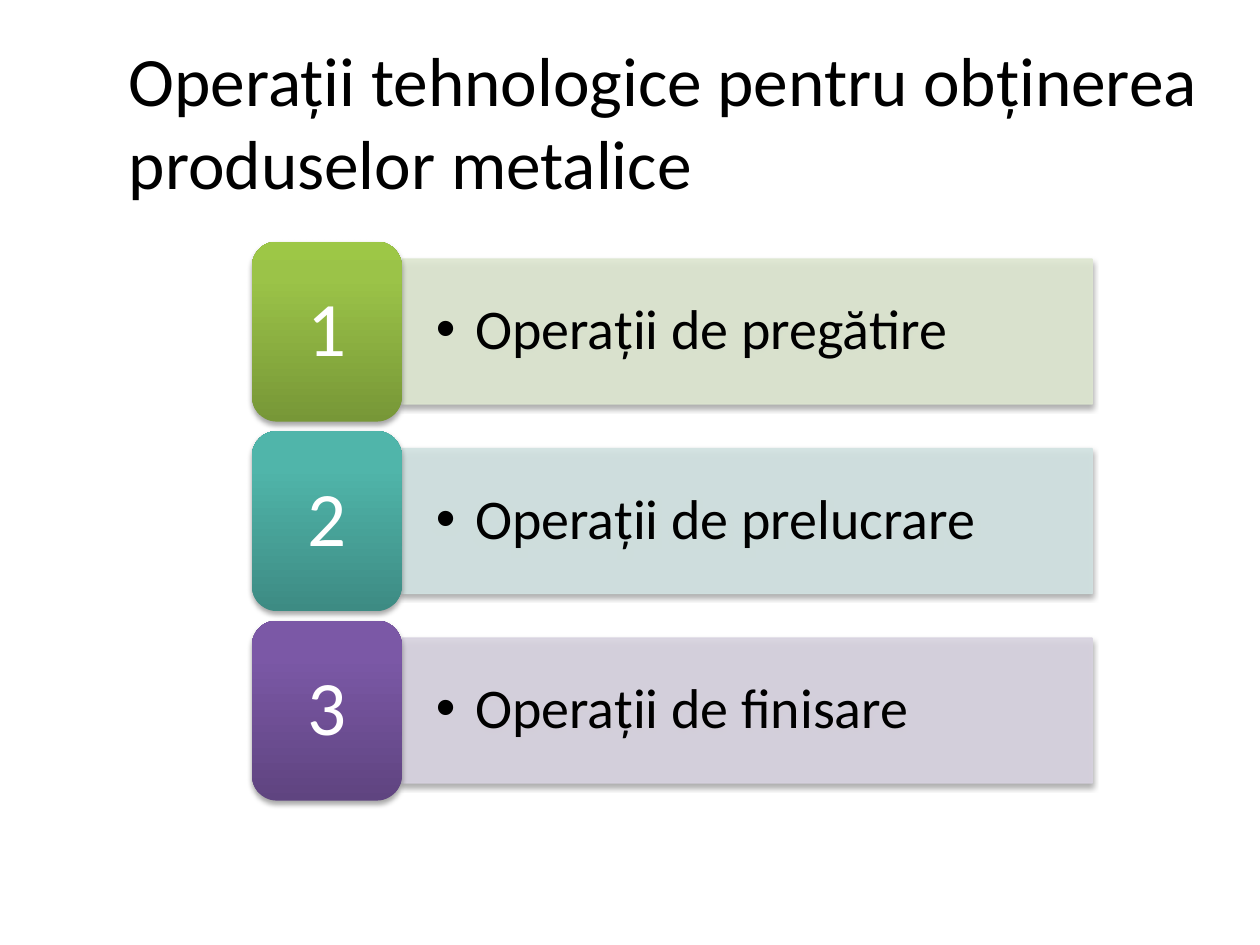
from dataclasses import dataclass

from lxml.etree import SubElement
from pptx import Presentation
from pptx.dml.color import RGBColor
from pptx.enum.shapes import MSO_SHAPE as Shape
from pptx.enum.text import MSO_ANCHOR as Anchor, MSO_AUTO_SIZE as AutoSize, PP_ALIGN as Align
from pptx.oxml.ns import qn
from pptx.util import Cm, Pt


@dataclass(frozen=True)
class Theme:
    font: str = "Calibri"
    dark: str = "000000"
    light: str = "FFFFFF"
    title_size: float = 39.6
    number_size: float = 44
    item_size: float = 32
    bar_opacity: int = 90
    shadow_opacity: int = 35


@dataclass(frozen=True)
class Step:
    text: str
    bar_color: str
    gradient: tuple[str, str, str]  # bottom to top


THEME = Theme()
STEPS = [
    Step("Operații de pregătire", "DEE7D1", ("779737", "9BC348", "9DC746")),
    Step("Operații de prelucrare", "D2E3E2", ("3D8B83", "50B5AA", "4EB8AC")),
    Step("Operații de finisare", "D8D3E0", ("5F4480", "7B58A6", "7C57A8")),
]
GRADIENT_STOPS = (0, 80, 100)

BADGE_LEFT, BADGE_W, BADGE_H = 5.08, 3.02, 3.63
BAR_W, BAR_H = 13.92, 2.92
FIRST_TOP, PITCH = 4.87, 3.82
INDENT = 0.79


def set_attrs(target, values: dict) -> None:
    for name, value in values.items():
        setattr(target, name, value)


def set_alpha(color, percent: int) -> None:
    SubElement(color, qn("a:alpha"), val=str(percent * 1000))


def add_shadow(sp) -> None:
    """Soft shadow straight below; call once fill and line are set."""
    sp.shadow.inherit = False
    effects = sp._element.spPr.find(qn("a:effectLst"))
    shadow = SubElement(effects, qn("a:outerShdw"), blurRad=str(Pt(3.1)),
                        dist=str(Pt(1.8)), dir="5400000", rotWithShape="0")
    set_alpha(SubElement(shadow, qn("a:srgbClr"), val=THEME.dark), THEME.shadow_opacity)


def write_text(sp, text: str, size: float, color: str, frame: dict, paragraph: dict) -> None:
    tf = sp.text_frame
    set_attrs(tf, {"word_wrap": True, "vertical_anchor": Anchor.MIDDLE} | frame)
    p = tf.paragraphs[0]
    set_attrs(p, paragraph)
    r = p.add_run()
    r.text = text
    set_attrs(r.font, {"name": THEME.font, "size": Pt(size)})
    r.font.color.rgb = RGBColor.from_string(color)


def margins(side: float, end: float) -> dict:
    return {"margin_left": Cm(side), "margin_right": Cm(side),
            "margin_top": Cm(end), "margin_bottom": Cm(end)}


def add_bullet(sp) -> None:
    pPr = sp.text_frame.paragraphs[0]._p.get_or_add_pPr()
    pPr.set("marL", str(Cm(INDENT)))
    pPr.set("indent", str(-Cm(INDENT)))
    SubElement(pPr, qn("a:buFont"), typeface="Arial")
    SubElement(pPr, qn("a:buChar"), char="•")


def add_bar(slide, step: Step, top: float) -> None:
    sp = slide.shapes.add_shape(Shape.RECTANGLE, Cm(BADGE_LEFT + BADGE_W),
                                Cm(top + (BADGE_H - BAR_H) / 2), Cm(BAR_W), Cm(BAR_H))
    color = RGBColor.from_string(step.bar_color)
    sp.fill.solid()
    sp.fill.fore_color.rgb = color
    sp.line.color.rgb = color
    sp.line.width = Pt(0.75)
    for element in sp._element.spPr.iter(qn("a:srgbClr")):
        set_alpha(element, THEME.bar_opacity)
    add_shadow(sp)
    add_bullet(sp)
    write_text(sp, step.text, THEME.item_size, THEME.dark, margins(0.69, 0.36),
               {"alignment": Align.LEFT, "line_spacing": 0.9})


def add_badge(slide, number: int, step: Step, top: float) -> None:
    sp = slide.shapes.add_shape(Shape.ROUNDED_RECTANGLE, Cm(BADGE_LEFT), Cm(top),
                                Cm(BADGE_W), Cm(BADGE_H))
    sp.fill.gradient()
    sp.fill.gradient_angle = 90
    stops = sp._element.spPr.find(".//" + qn("a:gsLst"))
    stops.clear()
    for position, color in zip(GRADIENT_STOPS, step.gradient):
        stop = SubElement(stops, qn("a:gs"), pos=str(position * 1000))
        SubElement(stop, qn("a:srgbClr"), val=color)
    sp.line.fill.background()
    add_shadow(sp)
    write_text(sp, str(number), THEME.number_size, THEME.light, margins(0.46, 0.23),
               {"alignment": Align.CENTER, "line_spacing": 0.9})


def add_title(slide, text: str) -> None:
    title = slide.shapes.title
    set_attrs(title, {"left": Cm(2.34), "top": Cm(0.84),
                      "width": Cm(22.43), "height": Cm(3.18)})
    write_text(title, text, THEME.title_size, THEME.dark,
               {"auto_size": AutoSize.NONE}, {"alignment": Align.LEFT})


def main() -> None:
    prs = Presentation()
    set_attrs(prs, {"slide_width": Cm(25.4), "slide_height": Cm(19.05)})
    slide = prs.slides.add_slide(prs.slide_layouts.get_by_name("Title Only"))
    add_title(slide, "Operații tehnologice pentru obținerea produselor metalice")
    for i, step in enumerate(STEPS):
        top = FIRST_TOP + i * PITCH
        add_bar(slide, step, top)
        add_badge(slide, i + 1, step, top)
    prs.save("out.pptx")


if __name__ == "__main__":
    main()
